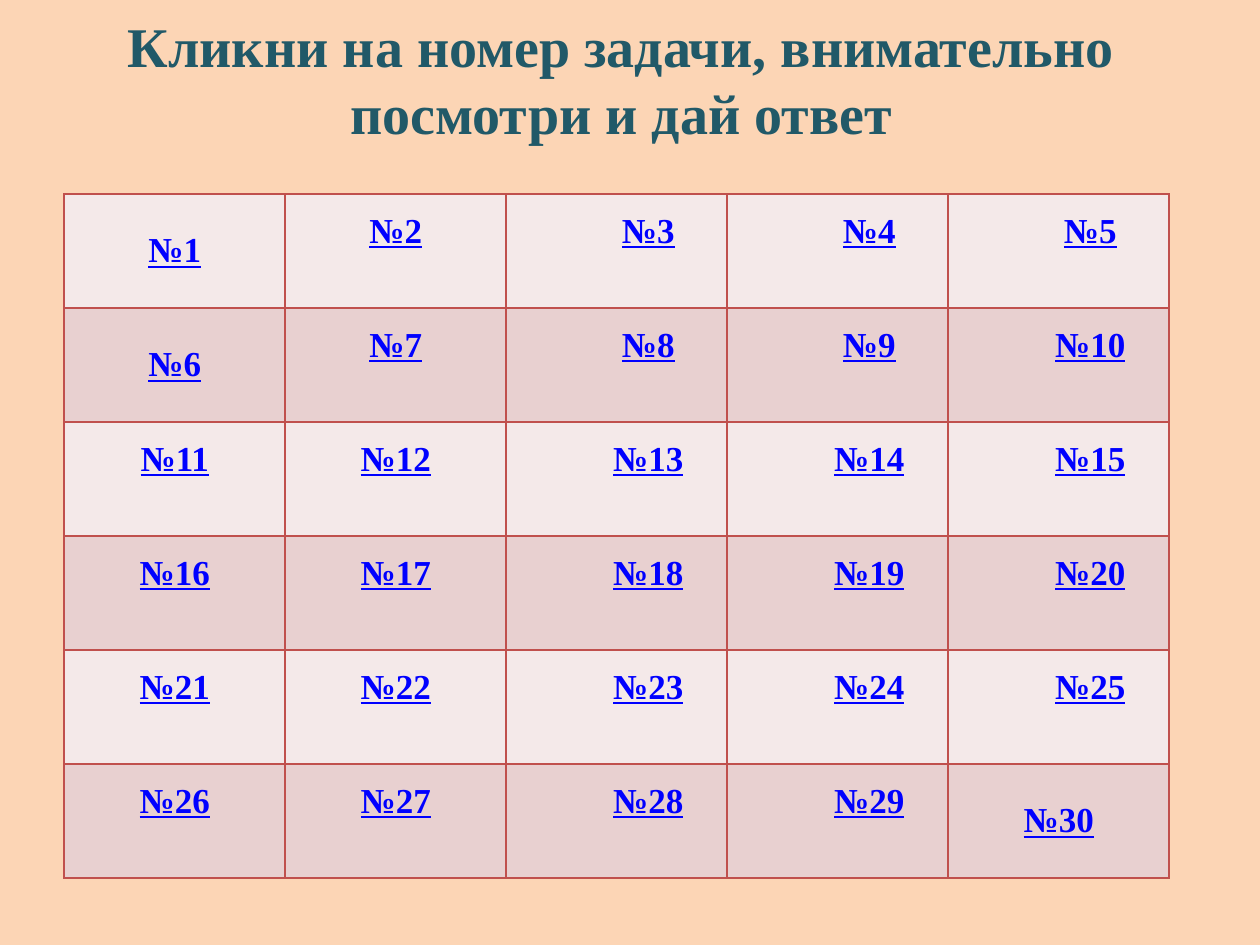
from dataclasses import dataclass

from lxml.etree import SubElement
from pptx import Presentation
from pptx.dml.color import RGBColor
from pptx.enum.text import MSO_ANCHOR, MSO_AUTO_SIZE, PP_ALIGN
from pptx.oxml.ns import qn
from pptx.util import Inches, Pt

FONT = "Times New Roman"
BACKGROUND, TITLE_COLOR, LINK_COLOR = "FCD5B5", "215968", "0000FF"
BORDER_COLOR, BAND_COLORS = "C0504D", ("F4E9E9", "E8D0D0")
ROWS, COLUMNS = 6, 5
CENTERED_NUMBERS = {1, 6, 30}
FIRST_INDENTED_COLUMN = 2


@dataclass(frozen=True)
class Box:
    left: float
    top: float
    width: float
    height: float

    def lengths(self) -> list:
        return [Inches(n) for n in (self.left, self.top, self.width, self.height)]


TITLE_BOX = Box(0.43, 0, 9, 1.25)
TABLE_BOX = Box(0.51, 1.54, 8.77, 5.43)


@dataclass(frozen=True)
class TaskCell:
    number: int

    @property
    def row(self) -> int:
        return (self.number - 1) // COLUMNS

    @property
    def column(self) -> int:
        return (self.number - 1) % COLUMNS

    @property
    def raised(self) -> bool:
        return self.number not in CENTERED_NUMBERS

    @property
    def indented(self) -> bool:
        return self.raised and self.column >= FIRST_INDENTED_COLUMN


def color(value: str) -> RGBColor:
    return RGBColor.from_string(value)


def write(text_frame, text: str, *, size: float, fill: str,
          underline: bool = False, level: int = 0) -> None:
    paragraph = text_frame.paragraphs[0]
    paragraph.alignment = PP_ALIGN.CENTER
    paragraph.level = level
    if level:
        properties = paragraph._p.get_or_add_pPr()
        properties.set("marL", str(Inches(0.5 * level)))
        properties.set("indent", "0")
    run = paragraph.add_run()
    run.text = text
    run.font.name = FONT
    run.font.size = Pt(size)
    run.font.bold = True
    run.font.underline = underline
    run.font.color.rgb = color(fill)


def add_borders(cell, line_color: str, width: float) -> None:
    properties = cell._tc.get_or_add_tcPr()
    for side in ("a:lnL", "a:lnR", "a:lnT", "a:lnB"):
        line = SubElement(properties, qn(side), w=str(Pt(width)))
        SubElement(SubElement(line, qn("a:solidFill")), qn("a:srgbClr"), val=line_color)


def draw_task(table, task: TaskCell) -> None:
    cell = table.cell(task.row, task.column)
    add_borders(cell, BORDER_COLOR, 1)
    cell.fill.solid()
    cell.fill.fore_color.rgb = color(BAND_COLORS[task.row % 2])
    cell.vertical_anchor = MSO_ANCHOR.MIDDLE
    if task.raised:
        cell.margin_bottom = Inches(0.36)
    write(cell.text_frame, f"№{task.number}", size=20, fill=LINK_COLOR,
          underline=True, level=int(task.indented))


def add_task_table(slide) -> None:
    table = slide.shapes.add_table(ROWS, COLUMNS, *TABLE_BOX.lengths()).table
    table.first_row = table.horz_banding = False
    for number in range(1, ROWS * COLUMNS + 1):
        draw_task(table, TaskCell(number))


def format_title(title) -> None:
    title.left, title.top, title.width, title.height = TITLE_BOX.lengths()
    title.text_frame.auto_size = MSO_AUTO_SIZE.NONE
    title.text_frame.vertical_anchor = MSO_ANCHOR.MIDDLE
    write(title.text_frame, "Кликни на номер задачи, внимательно посмотри и дай ответ",
          size=32, fill=TITLE_COLOR)


def main() -> None:
    presentation = Presentation()
    presentation.slide_width, presentation.slide_height = Inches(10), Inches(7.5)
    slide = presentation.slides.add_slide(presentation.slide_layouts[5])
    slide.background.fill.solid()
    slide.background.fill.fore_color.rgb = color(BACKGROUND)
    format_title(slide.shapes.title)
    add_task_table(slide)
    presentation.save("out.pptx")


if __name__ == "__main__":
    main()
